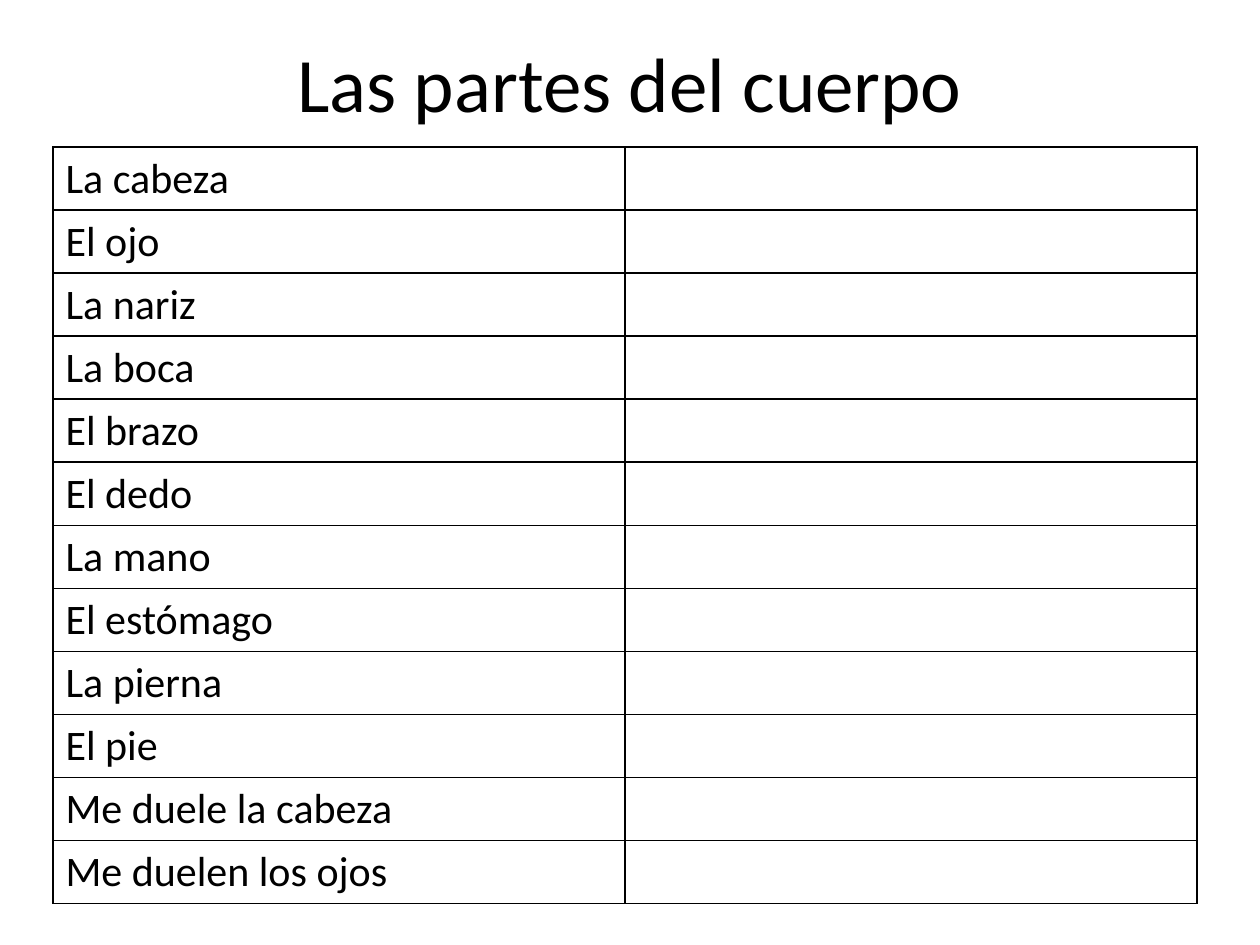
from dataclasses import dataclass

from lxml.etree import SubElement
from pptx import Presentation
from pptx.dml.color import RGBColor
from pptx.enum.text import MSO_ANCHOR as Anchor, PP_ALIGN as Align
from pptx.oxml.ns import qn
from pptx.util import Inches, Pt


@dataclass(frozen=True)
class Theme:
    font: str = "Calibri"
    ink: str = "000000"
    title_size: int = 44
    body_size: int = 24
    border_width: int = 1


THEME = Theme()
PX_PER_INCH = 126
TITLE = "Las partes del cuerpo"
PHRASES = [
    "La cabeza", "El ojo", "La nariz", "La boca", "El brazo", "El dedo",
    "La mano", "El estómago", "La pierna", "El pie",
    "Me duele la cabeza", "Me duelen los ojos",
]


def px(length):
    return Inches(length / PX_PER_INCH)


def set_attributes(target, values):
    for name, value in values.items():
        setattr(target, name, value)


def write_text(paragraph, text, size):
    run = paragraph.add_run()
    run.text = text
    set_attributes(run.font, {"name": THEME.font, "size": Pt(size), "bold": False})
    run.font.color.rgb = RGBColor.from_string(THEME.ink)


def add_title(slide, text, left, top, width, height):
    shape = slide.shapes.add_textbox(px(left), px(top), px(width), px(height))
    frame = shape.text_frame
    set_attributes(frame, {"word_wrap": True, "vertical_anchor": Anchor.MIDDLE})
    paragraph = frame.paragraphs[0]
    paragraph.alignment = Align.CENTER
    write_text(paragraph, text, THEME.title_size)


def outline_cell(cell):
    properties = cell._tc.get_or_add_tcPr()
    for side in ("a:lnL", "a:lnR", "a:lnT", "a:lnB"):
        line = SubElement(properties, qn(side), w=str(Pt(THEME.border_width)))
        fill = SubElement(line, qn("a:solidFill"))
        SubElement(fill, qn("a:srgbClr"), val=THEME.ink)
    cell.fill.background()


def add_vocabulary_table(slide, phrases, left, top, column_width, row_height):
    table = slide.shapes.add_table(
        len(phrases), 2, px(left), px(top),
        px(2 * column_width), px(len(phrases) * row_height),
    ).table
    set_attributes(table, {"first_row": False, "horz_banding": False})
    for column in table.columns:
        column.width = px(column_width)
    for row, phrase in zip(table.rows, phrases):
        row.height = px(row_height)
        for cell in row.cells:
            outline_cell(cell)
        write_text(row.cells[0].text_frame.paragraphs[0], phrase, THEME.body_size)


def main():
    presentation = Presentation()
    set_attributes(presentation, {"slide_width": px(1260), "slide_height": px(945)})
    slide = presentation.slides.add_slide(presentation.slide_layouts[6])
    add_title(slide, TITLE, left=63, top=21, width=1134, height=122)
    add_vocabulary_table(
        slide, PHRASES, left=53, top=147, column_width=572, row_height=62
    )
    presentation.save("out.pptx")


if __name__ == "__main__":
    main()
